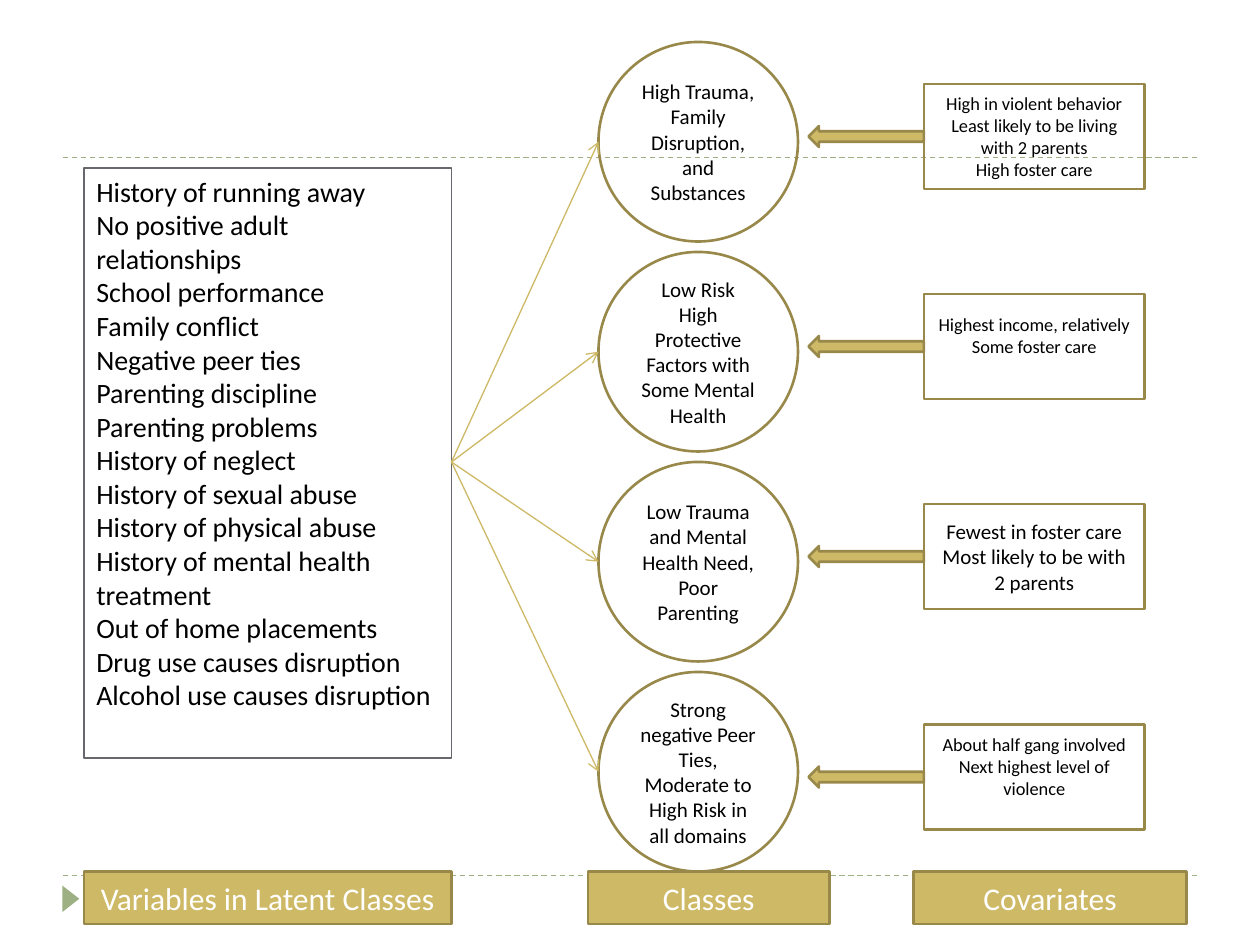
from lxml.etree import SubElement
from pptx import Presentation
from pptx.dml.color import RGBColor
from pptx.enum.dml import MSO_LINE
from pptx.enum.shapes import MSO_CONNECTOR, MSO_SHAPE
from pptx.enum.text import MSO_ANCHOR, PP_ALIGN
from pptx.oxml.ns import qn
from pptx.util import Inches, Pt

GOLD = RGBColor(0xCE, 0xB9, 0x66)
DARK_GOLD = RGBColor(0x98, 0x89, 0x4B)
SAGE = RGBColor(0x9C, 0xB0, 0x84)
GRAY = RGBColor(0x69, 0x67, 0x6D)
BLACK = RGBColor(0, 0, 0)
WHITE = RGBColor(0xFF, 0xFF, 0xFF)

COLUMNS, ROWS = 120, 90
CELL = Inches(10) / COLUMNS

VARIABLES = [
    "History of running away", "No positive adult relationships",
    "School performance", "Family conflict", "Negative peer ties",
    "Parenting discipline", "Parenting problems", "History of neglect",
    "History of sexual abuse", "History of physical abuse",
    "History of mental health treatment", "Out of home placements",
    "Drug use causes disruption", "Alcohol use causes disruption",
]
CLASSES = [
    "High Trauma, Family Disruption, and Substances",
    "Low Risk High Protective Factors with Some Mental Health",
    "Low Trauma and Mental Health Need, Poor Parenting",
    "Strong negative Peer Ties, Moderate to High Risk in all domains",
]
COVARIATES = [
    (8, 10.5, 0, ["High in violent behavior",
                  "Least likely to be living with 2 parents", "High foster care"]),
    (28, 10.5, 1, ["Highest income, relatively", "Some foster care"]),
    (48, 12, 0, ["Fewest in foster care", "Most likely to be with 2 parents"]),
    (69, 10.5, 1, ["About half gang involved", "Next highest level of violence"]),
]
HEADINGS = [(8, 35, "Variables in Latent Classes"), (56, 23, "Classes"),
            (87, 26, "Covariates")]


def cells(*counts):
    return [round(count * CELL) for count in counts]


def add_box(slide, preset, box, fill=None, line=DARK_GOLD, width=1.5):
    shape = slide.shapes.add_shape(preset, *cells(*box))
    shape.shadow.inherit = False
    if fill is None:
        shape.fill.background()
    else:
        shape.fill.solid()
        shape.fill.fore_color.rgb = fill
    if line is None:
        shape.line.fill.background()
    else:
        shape.line.color.rgb = line
        shape.line.width = Pt(width)
    return shape


def write(shape, lines, size, color=BLACK, align=PP_ALIGN.CENTER,
          anchor=MSO_ANCHOR.MIDDLE):
    frame = shape.text_frame
    frame.word_wrap = True
    frame.vertical_anchor = anchor
    frame.text = "\n".join(lines)
    for paragraph in frame.paragraphs:
        paragraph.alignment = align
        paragraph.font.name = "Calibri"
        paragraph.font.size = Pt(size)
        paragraph.font.color.rgb = color


def add_line(slide, start, end, color):
    connector = slide.shapes.add_connector(
        MSO_CONNECTOR.STRAIGHT, *cells(*start, *end))
    connector.line.color.rgb = color
    connector.line.width = Pt(0.75)
    SubElement(connector._element.spPr, qn("a:effectLst"))
    return connector


def add_guides(slide, left, right, top, bottom):
    for row in (bottom, top):
        guide = add_line(slide, (left, row), (right, row), SAGE)
        guide.line.dash_style = MSO_LINE.DASH
    marker = add_box(slide, MSO_SHAPE.ISOSCELES_TRIANGLE,
                     (left - 0.5, bottom + 1.4, 2.5, 1.6), SAGE, None)
    marker.rotation = 90


def add_variables(slide, box):
    panel = add_box(slide, MSO_SHAPE.RECTANGLE, box, line=GRAY, width=0.75)
    write(panel, VARIABLES, 16, align=PP_ALIGN.LEFT, anchor=MSO_ANCHOR.TOP)


def add_classes(slide, left, top, diameter, pitch):
    for index, name in enumerate(CLASSES):
        circle = add_box(slide, MSO_SHAPE.OVAL,
                         (left, top + index * pitch, diameter, diameter))
        write(circle, [name], 12)


def add_fan(slide, hub, left, first_row, pitch):
    for index in range(len(CLASSES)):
        ray = add_line(slide, hub, (left, first_row + index * pitch), GOLD)
        SubElement(ray.line._get_or_add_ln(), qn("a:tailEnd"), type="arrow")


def add_covariate(slide, box, size, spare_lines, lines):
    left, top, width, height = box
    note = add_box(slide, MSO_SHAPE.RECTANGLE, box)
    write(note, lines, size)
    note.text_frame.margin_bottom = Inches(0.05) + Pt(spare_lines * size * 1.22)
    add_box(slide, MSO_SHAPE.LEFT_ARROW, (left - 11, top + 4, 11, 2), GOLD)


def add_headings(slide, top, height):
    for left, width, heading in HEADINGS:
        label = add_box(slide, MSO_SHAPE.RECTANGLE, (left, top, width, height), GOLD)
        write(label, [heading], 18, WHITE)


def main():
    deck = Presentation()
    deck.slide_width, deck.slide_height = cells(COLUMNS, ROWS)
    slide = deck.slides.add_slide(deck.slide_layouts[6])
    add_guides(slide, 6, 114, 15, 83.4)
    add_variables(slide, (8, 16, 35, 56.2))
    add_classes(slide, 57, 4, 19, 20)
    add_fan(slide, (43, 44), 57, 13.5, 20)
    for top, size, spare_lines, lines in COVARIATES:
        add_covariate(slide, (88, top, 21, 10), size, spare_lines, lines)
    add_headings(slide, 83, 5)
    deck.save("out.pptx")


if __name__ == "__main__":
    main()
